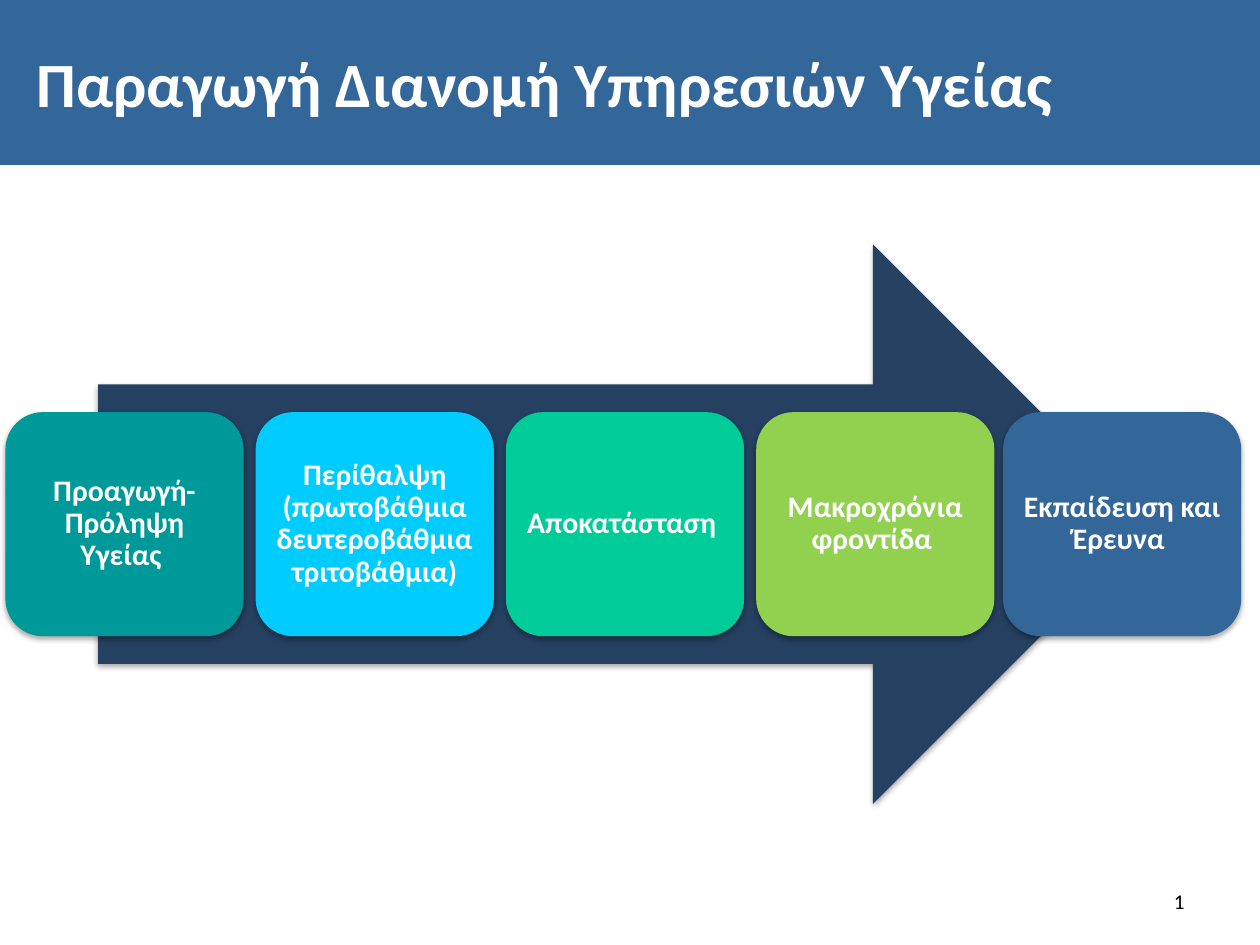
from dataclasses import dataclass

from lxml import etree
from pptx import Presentation
from pptx.dml.color import RGBColor
from pptx.enum.shapes import MSO_SHAPE
from pptx.enum.text import MSO_ANCHOR, MSO_AUTO_SIZE, PP_ALIGN
from pptx.oxml import parse_xml
from pptx.oxml.ns import qn
from pptx.util import Pt

ARROW = MSO_SHAPE.RIGHT_ARROW
ROUND = MSO_SHAPE.ROUNDED_RECTANGLE
LEFT, CENTER, RIGHT = PP_ALIGN.LEFT, PP_ALIGN.CENTER, PP_ALIGN.RIGHT
MIDDLE = MSO_ANCHOR.MIDDLE
FIXED = MSO_AUTO_SIZE.NONE
TITLE_ONLY = 5


@dataclass(frozen=True)
class Theme:
    font: str = "Calibri"
    blue: str = "336699"
    navy: str = "254061"
    teal: str = "009999"
    cyan: str = "00CCFF"
    mint: str = "00CC99"
    lime: str = "92D050"
    white: str = "FFFFFF"
    black: str = "000000"
    head: int = 36
    body: int = 17
    small: int = 12


THEME = Theme()
SHADOW = (
    '<a:effectLst xmlns:a="http://schemas.openxmlformats.org/drawingml/2006/main">'
    '<a:outerShdw blurRad="40000" dist="23000" dir="5400000" rotWithShape="0">'
    '<a:srgbClr val="000000"><a:alpha val="35000"/></a:srgbClr>'
    "</a:outerShdw></a:effectLst>"
)
STEPS = [
    ("Προαγωγή- Πρόληψη Υγείας ", THEME.teal),
    ("Περίθαλψη (πρωτοβάθμια δευτεροβάθμια τριτοβάθμια)", THEME.cyan),
    ("Αποκατάσταση ", THEME.mint),
    ("Μακροχρόνια φροντίδα ", THEME.lime),
    ("Εκπαίδευση και Έρευνα ", THEME.blue),
]


def write(shape, text, size=THEME.body, color=THEME.white, bold=True,
          align=CENTER, pad=None, lead=None):
    frame = shape.text_frame
    frame.word_wrap = True
    frame.auto_size = FIXED
    frame.vertical_anchor = MIDDLE
    if pad is not None:
        frame.margin_left = frame.margin_right = Pt(pad)
        frame.margin_top = frame.margin_bottom = Pt(pad)
    para = frame.paragraphs[0]
    para.alignment = align
    if lead:
        para.line_spacing = lead
    run = para.add_run()
    run.text = text
    font = run.font
    font.name, font.size, font.bold = THEME.font, Pt(size), bold
    font.color.rgb = RGBColor.from_string(color)
    return para


def paint(shape, color):
    shape.fill.solid()
    shape.fill.fore_color.rgb = RGBColor.from_string(color)
    shape.line.fill.background()


def block(slide, kind, box, color):
    shape = slide.shapes.add_shape(kind, *map(Pt, box))
    paint(shape, color)
    shape.shadow.inherit = False
    props = shape.fill._xPr
    props.replace(props.find(qn("a:effectLst")), parse_xml(SHADOW))
    return shape


def header(slide, box, text):
    title = slide.shapes.title
    title.left, title.top, title.width, title.height = map(Pt, box)
    paint(title, THEME.blue)
    para = write(title, text, size=THEME.head, align=LEFT)
    props = para._p.get_or_add_pPr()
    props.set("marL", str(Pt(13.7)))
    props.set("indent", "0")


def flow(slide, box, steps):
    left, top, width, height = box
    block(slide, ARROW, (left + 53, top, 602.6, height), THEME.navy)
    wide, tall, gap = 136.1, 128, 6.9
    row = top + (height - tall) / 2
    last = len(steps) - 1
    for i, (text, color) in enumerate(steps):
        x = left + width - wide if i == last else left + i * (wide + gap)
        card = block(slide, ROUND, (x, row, wide, tall), color)
        write(card, text, pad=5.1, lead=0.9)


def footer(slide, box):
    note = slide.shapes.add_textbox(*map(Pt, box))
    para = write(note, "1", size=THEME.small, color=THEME.black,
                 bold=False, align=RIGHT)
    run = para.runs[0]._r
    field = etree.SubElement(para._p, qn("a:fld"))
    field.set("id", "{B6F15528-21DE-4FAA-801E-634DDDAF4B2B}")
    field.set("type", "slidenum")
    field.extend(list(run))
    para._p.remove(run)


def main():
    deck = Presentation()
    deck.slide_width, deck.slide_height = Pt(720), Pt(540)
    slide = deck.slides.add_slide(deck.slide_layouts[TITLE_ONLY])
    header(slide, (0, 0, 720, 94.3), "Παραγωγή Διανομή Υπηρεσιών Υγείας")
    flow(slide, (3.1, 139.7, 706.2, 319.7), STEPS)
    footer(slide, (516, 500.4, 168, 28.8))
    deck.save("out.pptx")


if __name__ == "__main__":
    main()
